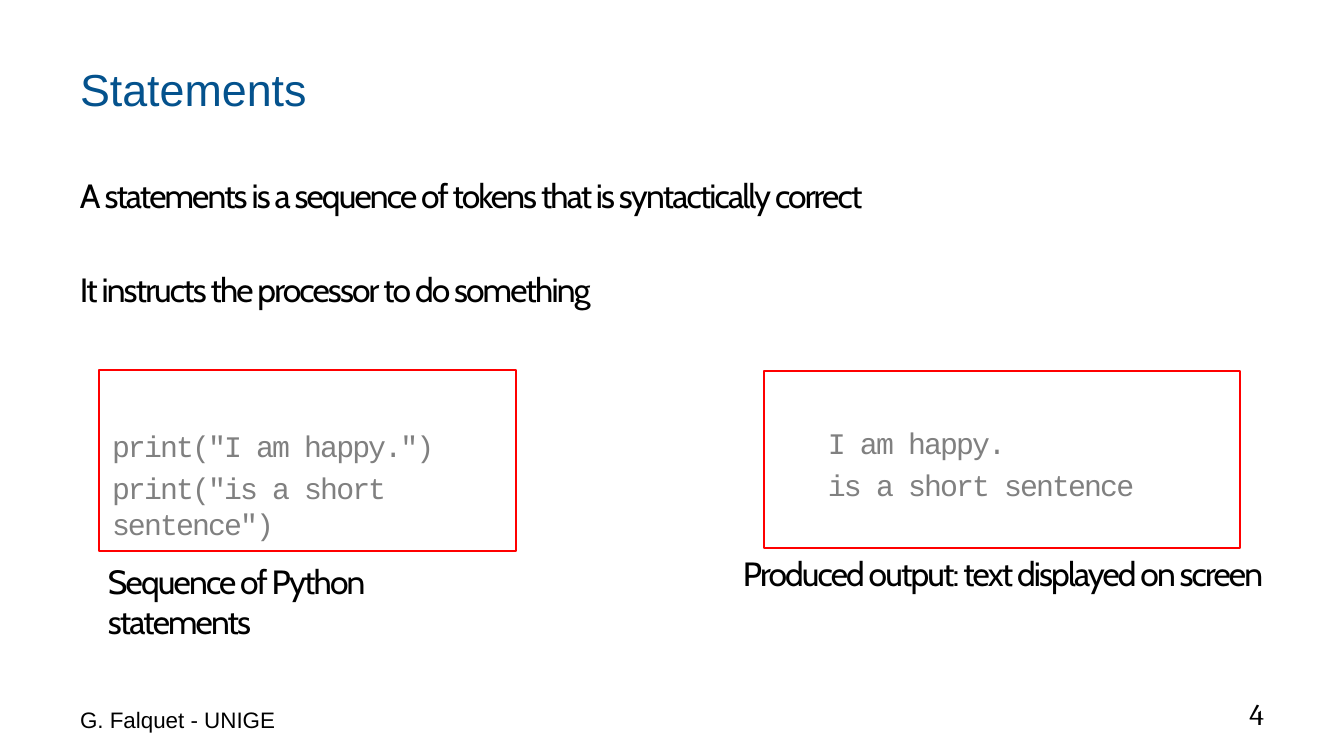
from pptx import Presentation
from pptx.dml.color import RGBColor as Color
from pptx.enum.shapes import MSO_SHAPE as Shape
from pptx.enum.text import MSO_ANCHOR as Anchor, PP_ALIGN as Align
from pptx.util import Pt

EMU_PER_PX = 914400 / 134.4
COLOURS = {"title": "04528D", "text": "000000", "code": "808080", "frame": "FF0000"}


def px(length):
    return round(length * EMU_PER_PX)


class StatementSlide:
    """Holds the text style and the slide that the elements are added to."""

    def __init__(self, deck):
        self.slide = deck.slides.add_slide(deck.slide_layouts[5])

    def place(self, shape, area):
        shape.left, shape.top, shape.width, shape.height = map(px, area)

    def set_lines(self, shape, lines, font, size, colour="text", tracking=0, gap=0,
                  anchor=Anchor.TOP, align=Align.LEFT, wrap=True, inset=(13, 7)):
        frame = shape.text_frame
        frame.word_wrap = wrap
        frame.vertical_anchor = anchor
        frame.margin_left, frame.margin_top = map(px, inset)
        frame.margin_right, frame.margin_bottom = px(13), px(7)
        frame.text = "\n".join(lines)
        for index, para in enumerate(frame.paragraphs):
            para.alignment = align
            para.space_before = Pt(gap if index else 0)
            for span in para.runs:
                span.font.name = font
                span.font.size = Pt(size)
                span.font.color.rgb = Color.from_string(COLOURS[colour])
                if tracking:
                    span._r.get_or_add_rPr().set("spc", str(tracking * 100))

    def title(self, area, text):
        title = self.slide.shapes.title
        self.place(title, area)
        self.set_lines(title, [text], "Arial", 24, "title", anchor=Anchor.MIDDLE)

    def text(self, area, lines, font="Cabin", size=18, **style):
        box = self.slide.shapes.add_textbox(*map(px, area))
        self.set_lines(box, lines, font, size, **style)

    def code(self, area, lines, inset):
        box = self.slide.shapes.add_shape(Shape.RECTANGLE, *map(px, area))
        box.shadow.inherit = False
        box.fill.background()
        box.line.color.rgb = Color.from_string(COLOURS["frame"])
        box.line.width = Pt(0.75)
        self.set_lines(box, lines, "Courier New", 16, "code", tracking=-1, gap=3.2, inset=inset)


def main():
    deck = Presentation()
    deck.slide_width, deck.slide_height = px(1344), px(756)
    page = StatementSlide(deck)
    page.title((67, 42, 1187, 93), "Statements")
    page.text((67, 168, 1210, 379), [
        "A statements is a sequence of tokens that is syntactically correct",
        "It instructs the processor to do something",
    ], tracking=-1, gap=28.5)
    page.text((964, 688, 313, 51), ["4"], "Cambria", 16, anchor=Anchor.BOTTOM, align=Align.RIGHT)
    page.code((764, 371, 476, 177), ["I am happy.", "is a short sentence"], (64, 54))
    page.code((99, 370, 417, 181), ['print("I am happy.")', 'print("is a short sentence")'], (13, 58))
    page.text((95, 554, 419, 54), ["Sequence of Python statements"], tracking=-1)
    page.text((730, 546, 547, 54), ["Produced output: text displayed on screen"], tracking=-1, wrap=False)
    page.text((67, 688, 313, 52), ["G. Falquet - UNIGE"], "Arial", 12, anchor=Anchor.BOTTOM)
    deck.save("out.pptx")


if __name__ == "__main__":
    main()
